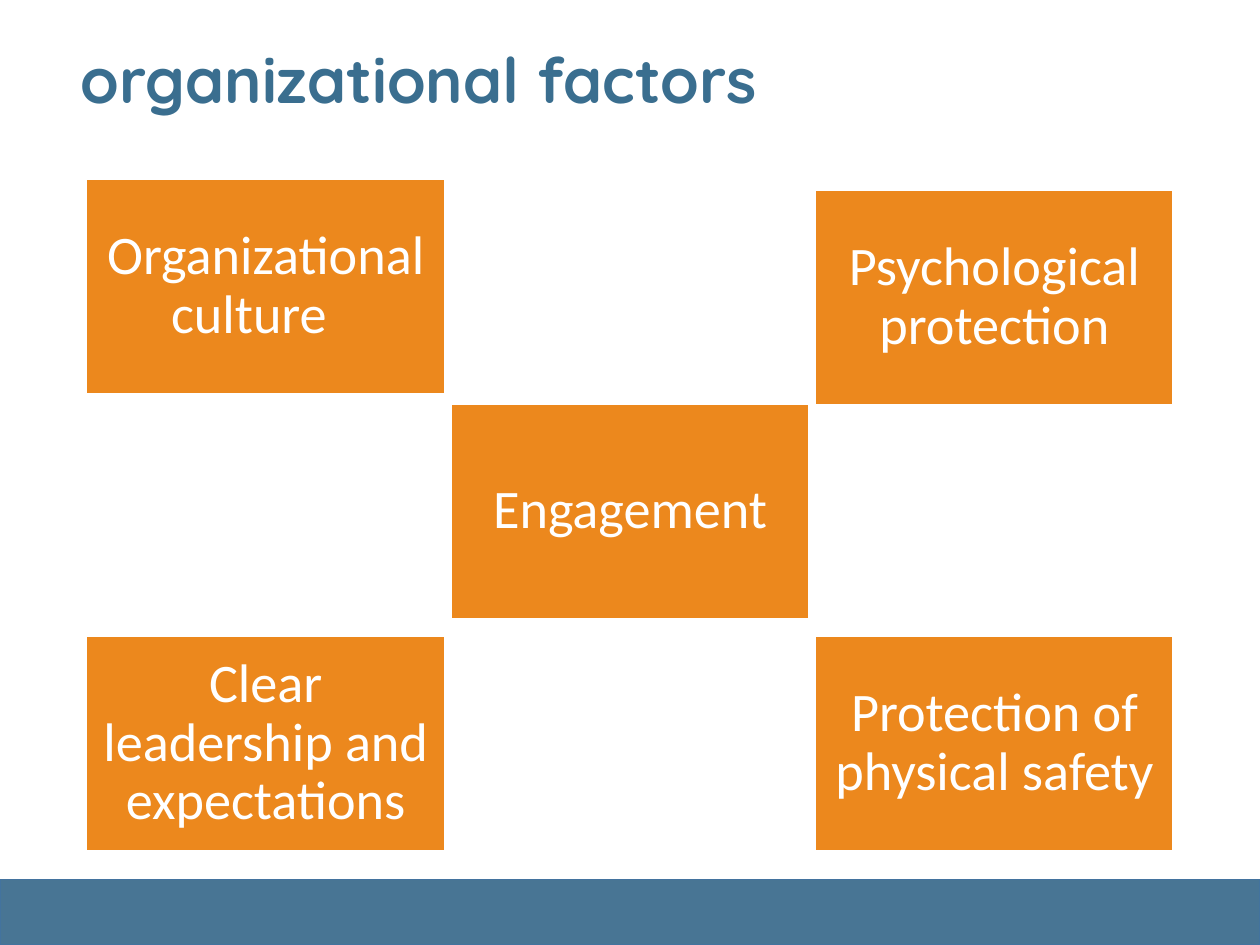
from dataclasses import dataclass

from pptx import Presentation
from pptx import util as u
from pptx.dml.color import RGBColor
from pptx.enum import shapes, text

WHITE = RGBColor(0xFF, 0xFF, 0xFF)
ORANGE = RGBColor(0xEC, 0x88, 0x1D)
BAND_BLUE = RGBColor(0x48, 0x75, 0x94)
BAND_EDGE = RGBColor(0x43, 0x73, 0x9E)
TITLE_BLUE = RGBColor(0x3A, 0x6E, 0x8F)

SLIDE_WIDTH, SLIDE_HEIGHT = 720, 540
BAND_TOP = 502.5
CARD_WIDTH, CARD_HEIGHT = 204.6, 122.6
CARD_INSET = 8.8
COLUMN_LEFT, COLUMN_STEP = 49.5, 208.2
BOTTOM_ROW = 363.6


@dataclass(frozen=True)
class Factor:
    label: str
    column: int
    top: float


FACTORS = [
    Factor("Organizational culture\t", 0, 102.4),
    Factor("Clear leadership and expectations", 0, BOTTOM_ROW),
    Factor("Engagement", 1, 230.9),
    Factor("Psychological protection", 2, 108.7),
    Factor("Protection of physical safety", 2, BOTTOM_ROW),
]


def add_rectangle(slide, left: float, top: float, width: float, height: float,
                  fill: RGBColor, line: RGBColor):
    shape = slide.shapes.add_shape(
        shapes.MSO_SHAPE.RECTANGLE,
        u.Pt(left), u.Pt(top), u.Pt(width), u.Pt(height))
    shape.shadow.inherit = False
    shape.fill.solid()
    shape.fill.fore_color.rgb = fill
    shape.line.color.rgb = line
    shape.line.width = u.Pt(1)
    return shape


def add_text(paragraph, content: str, font_name: str, size: float,
             color: RGBColor, bold: bool = False) -> None:
    run = paragraph.add_run()
    run.text = content
    run.font.name = font_name
    run.font.size = u.Pt(size)
    run.font.bold = bold
    run.font.color.rgb = color


def add_title(slide, content: str) -> None:
    title = slide.shapes.title
    title.left, title.top = u.Pt(38.9), u.Pt(19.4)
    title.width, title.height = u.Pt(617.8), u.Pt(59.8)
    frame = title.text_frame
    frame.auto_size = text.MSO_AUTO_SIZE.NONE
    frame.vertical_anchor = text.MSO_ANCHOR.TOP
    paragraph = frame.paragraphs[0]
    paragraph.alignment = text.PP_ALIGN.LEFT
    add_text(paragraph, content, "Quicksand", 36, TITLE_BLUE, bold=True)


def add_factor(slide, factor: Factor) -> None:
    left = COLUMN_LEFT + factor.column * COLUMN_STEP
    card = add_rectangle(slide, left, factor.top, CARD_WIDTH, CARD_HEIGHT,
                         ORANGE, WHITE)
    frame = card.text_frame
    frame.word_wrap = True
    frame.vertical_anchor = text.MSO_ANCHOR.MIDDLE
    frame.margin_left = frame.margin_right = u.Pt(CARD_INSET)
    frame.margin_top = frame.margin_bottom = u.Pt(CARD_INSET)
    paragraph = frame.paragraphs[0]
    paragraph.alignment = text.PP_ALIGN.CENTER
    paragraph.line_spacing = 0.9
    add_text(paragraph, factor.label, "Calibri", 31, WHITE)


def main() -> None:
    presentation = Presentation()
    presentation.slide_width = u.Pt(SLIDE_WIDTH)
    presentation.slide_height = u.Pt(SLIDE_HEIGHT)
    title_only = presentation.slide_layouts[5]
    slide = presentation.slides.add_slide(title_only)

    add_rectangle(slide, 0, BAND_TOP, SLIDE_WIDTH, SLIDE_HEIGHT - BAND_TOP,
                  BAND_BLUE, BAND_EDGE)
    add_title(slide, "organizational factors")
    for factor in FACTORS:
        add_factor(slide, factor)

    presentation.save("out.pptx")


if __name__ == "__main__":
    main()
